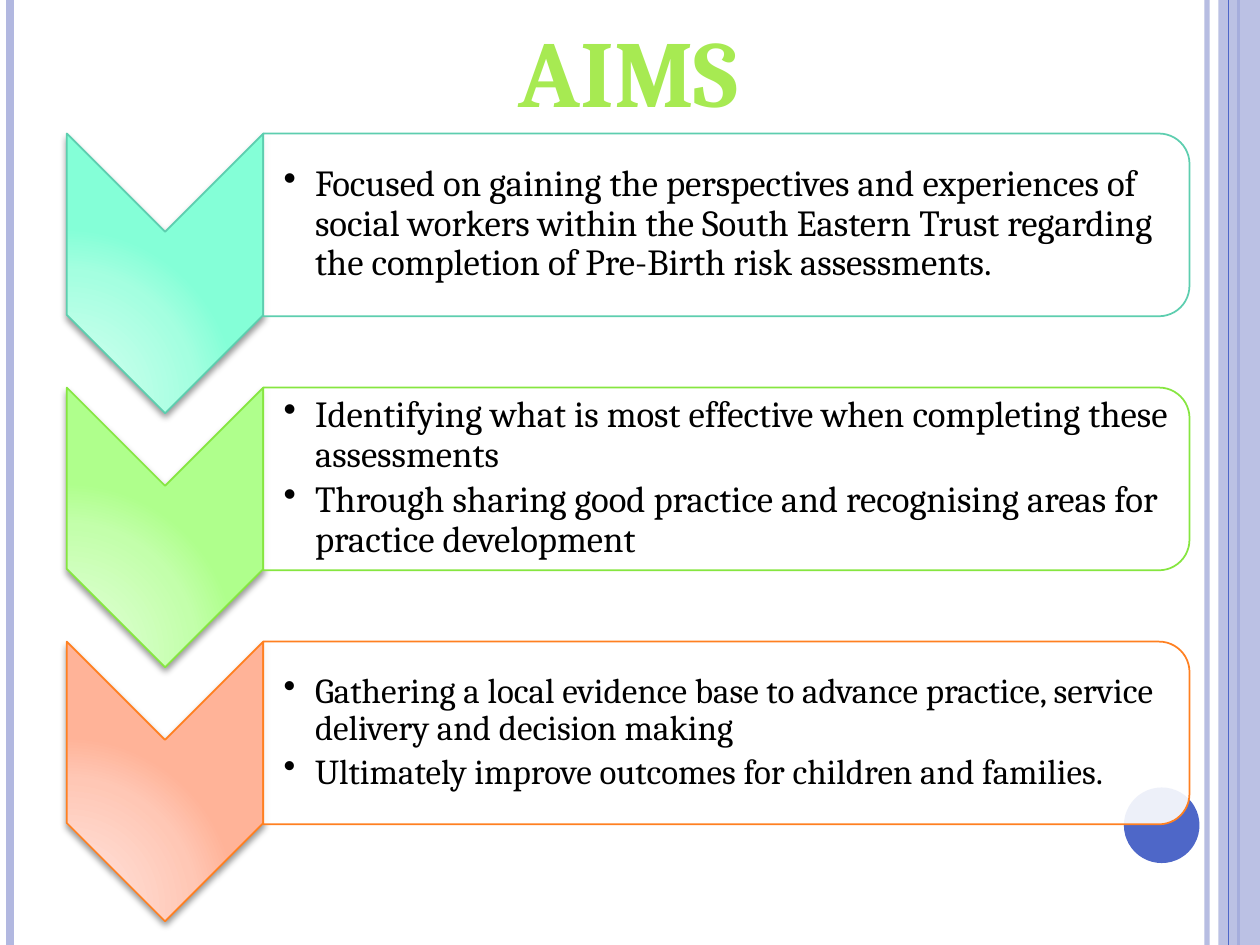
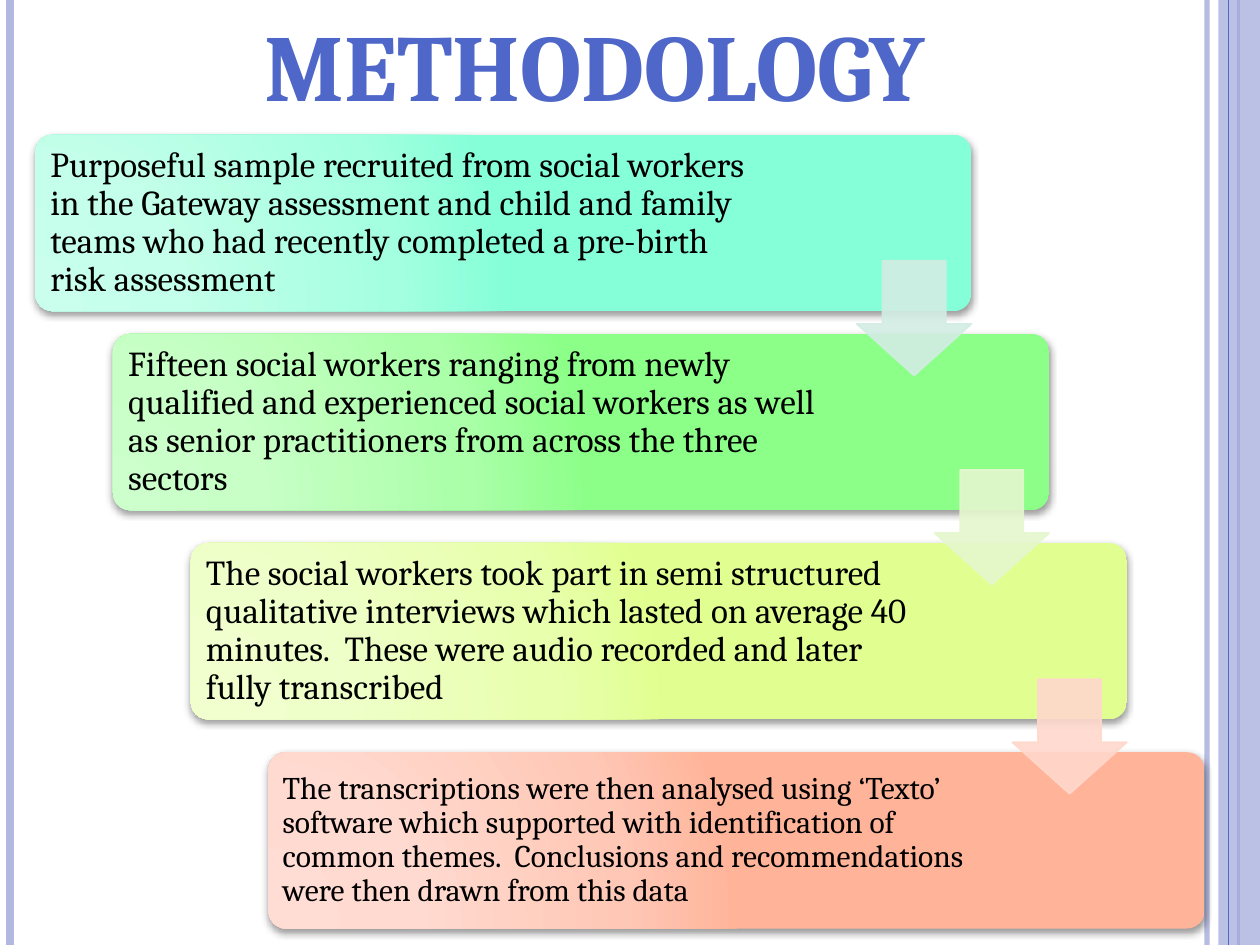
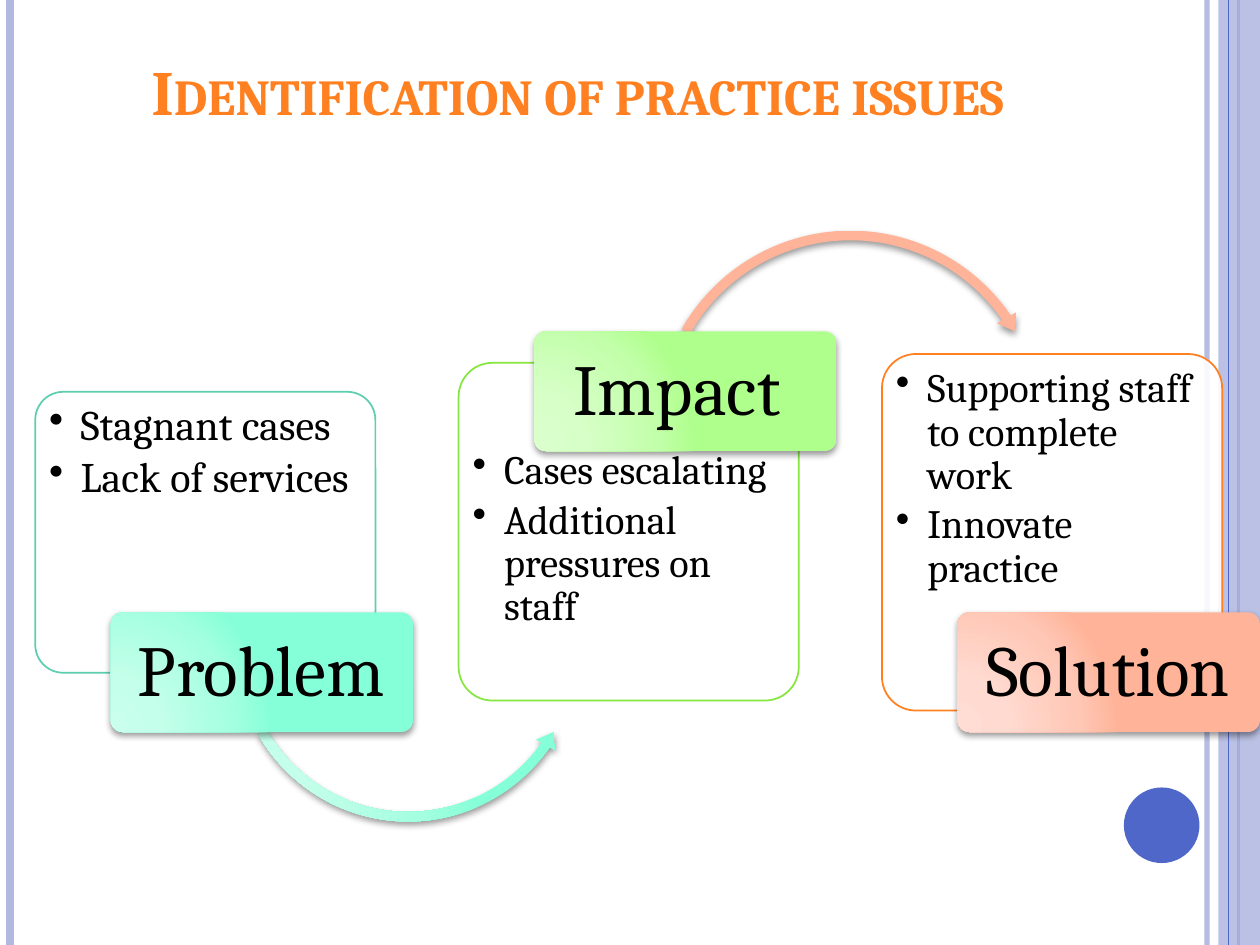
from dataclasses import dataclass

from lxml.etree import SubElement
from pptx import Presentation
from pptx.dml.color import RGBColor
from pptx.enum.shapes import MSO_CONNECTOR, MSO_SHAPE
from pptx.enum.text import MSO_ANCHOR, PP_ALIGN
from pptx.oxml import parse_xml
from pptx.oxml.ns import nsdecls, qn
from pptx.util import Inches, Pt


@dataclass(frozen=True)
class Theme:
    font: str = "Cambria"
    white: str = "FFFFFF"
    black: str = "000000"
    blue: str = "4E67C8"
    lavender: str = "B2B8E0"
    teal: str = "5DCEAF"
    leaf: str = "86E640"
    orange: str = "FF8021"
    lime: str = "A7EA52"
    pale_arrows: tuple = ("D2EDE3", "E5F7CE", "FFD8CC")
    aqua: tuple = ("C9FFEC", "C3FFEA", "A4FFE0", "84FFD7")
    spring: tuple = ("DAFFCD", "D7FFC8", "C3FFAB", "AFFF8C")
    green: tuple = ("CCFFCB", "C7FFC6", "AAFFA8", "8CFF89")
    yellow: tuple = ("F1FFCF", "EFFFCA", "E8FFAE", "E1FF90")
    peach: tuple = ("FFDDD4", "FFDAD0", "FFC7B5", "FFB398")
    gradient_stops: tuple = (0, 30, 75, 100)
    banner_size: int = 54
    label_size: int = 41
    heading_size: int = 36
    column_count: int = 100
    row_count: int = 75


def set_all(target, values):
    for name, value in values.items():
        setattr(target, name, value)


def turned(box):
    left, top, width, height = box
    shift = (width - height) / 2
    return left + shift, top - shift, height, width


class Deck:
    def __init__(self, theme):
        self.theme = theme
        self.presentation = Presentation()
        set_all(self.presentation, {"slide_width": Inches(10), "slide_height": Inches(7.5)})
        self.column = self.presentation.slide_width / theme.column_count
        self.row = self.presentation.slide_height / theme.row_count
        self.slide = None

    def place(self, box):
        units = (self.column, self.row, self.column, self.row)
        return [round(length * unit) for length, unit in zip(box, units)]

    def new_slide(self):
        theme = self.theme
        self.slide = self.presentation.slides.add_slide(self.presentation.slide_layouts[6])
        self.fade(self.stripe(95.8, theme.lavender, 3), 93)
        self.stripe(0.8, theme.lavender, 4.5)
        self.stripe(98.3, theme.blue, 1.5)
        self.fade(self.shape(MSO_SHAPE.RECTANGLE, (96.7, 0, 3.3, 75), theme.lavender), 87)
        self.stripe(97.5, theme.blue, 0.75)
        self.shape(MSO_SHAPE.OVAL, (89.2, 62.5, 6, 6), theme.blue)

    def stripe(self, column, color, width):
        start_x, start_y, end_x, end_y = self.place((column, 0, column, self.theme.row_count))
        connector = self.slide.shapes.add_connector(
            MSO_CONNECTOR.STRAIGHT, start_x, start_y, end_x, end_y)
        self.outline(connector, color, width)
        SubElement(connector.element.spPr, qn("a:effectLst"))
        return connector

    def shape(self, kind, box, color, adjustments=(), rotation=0):
        shape = self.slide.shapes.add_shape(kind, *self.place(box))
        shape.shadow.inherit = False
        shape.rotation = rotation
        shape.fill.solid()
        shape.fill.fore_color.rgb = RGBColor.from_string(color)
        shape.line.fill.background()
        for index, value in enumerate(adjustments):
            shape.adjustments[index] = value
        return shape

    def outline(self, shape, color, width=1):
        shape.line.color.rgb = RGBColor.from_string(color)
        shape.line.width = Pt(width)

    def fade(self, shape, opacity):
        for color in shape.element.spPr.iter(qn("a:srgbClr")):
            SubElement(color, qn("a:alpha"), val=str(opacity * 1000))

    def glossy(self, kind, box, colors, adjustments=(), rotation=0):
        shape = self.shape(kind, box, colors[-1], adjustments, rotation)
        properties = shape.element.spPr
        stops = "".join(
            f'<a:gs pos="{stop * 1000}"><a:srgbClr val="{color}"/></a:gs>'
            for stop, color in zip(self.theme.gradient_stops, colors))
        properties.replace(properties.find(qn("a:solidFill")), parse_xml(
            f'<a:gradFill {nsdecls("a")} rotWithShape="1"><a:gsLst>{stops}</a:gsLst>'
            '<a:path path="circle"><a:fillToRect l="5000" t="100000" r="120000" b="10000"/>'
            '</a:path></a:gradFill>'))
        properties.find(qn("a:effectLst")).append(parse_xml(
            f'<a:outerShdw {nsdecls("a")} blurRad="{Pt(4)}" dist="{Pt(2)}" dir="5400000" '
            f'rotWithShape="0"><a:srgbClr val="{self.theme.black}"><a:alpha val="40000"/>'
            '</a:srgbClr></a:outerShdw>'))
        return shape

    def panel(self, kind, box, color, adjustments=(), rotation=0):
        shape = self.shape(kind, box, self.theme.white, adjustments, rotation)
        self.fade(shape, 90)
        self.outline(shape, color)

    def text(self, box, paragraphs, size, color=None, bold=False, align=PP_ALIGN.LEFT,
             anchor=MSO_ANCHOR.MIDDLE, insets=(0.1, 0.05, 0.1, 0.05), wrap=True,
             spacing=None, after=0, bulleted=False, small_caps=False):
        frame = self.slide.shapes.add_textbox(*self.place(box)).text_frame
        left, top, right, bottom = map(Inches, insets)
        set_all(frame, {"word_wrap": wrap, "vertical_anchor": anchor, "margin_left": left,
                        "margin_top": top, "margin_right": right, "margin_bottom": bottom})
        for index, content in enumerate(paragraphs):
            paragraph = frame.add_paragraph() if index else frame.paragraphs[0]
            set_all(paragraph, {"alignment": align, "line_spacing": spacing,
                                "space_after": Pt(size * after)})
            run = paragraph.add_run()
            run.text = content
            set_all(run.font, {"name": self.theme.font, "size": Pt(size), "bold": bold})
            run.font.color.rgb = RGBColor.from_string(color or self.theme.black)
            if small_caps:
                run.font._element.set("cap", "small")
            if bulleted:
                properties = paragraph._p.get_or_add_pPr()
                properties.set("marL", str(Inches(0.25)))
                properties.set("indent", str(-Inches(0.25)))
                SubElement(properties, qn("a:buChar"), char="•")

    def bullets(self, box, paragraphs, size, **options):
        self.text(box, paragraphs, size, spacing=0.9, after=0.15, bulleted=True, **options)

    def banner(self, box, content, color):
        self.text(box, [content], self.theme.banner_size, color, bold=True,
                  align=PP_ALIGN.CENTER, anchor=MSO_ANCHOR.TOP, wrap=False)


def add_aims(deck):
    theme = deck.theme
    deck.new_slide()
    aims = [
        (theme.aqua, theme.teal, 21, [
            "Focused on gaining the perspectives and experiences of social workers within the "
            "South Eastern Trust regarding the completion of Pre-Birth risk assessments."]),
        (theme.spring, theme.leaf, 21, [
            "Identifying what is most effective when completing these assessments",
            "Through sharing good practice and recognising areas for practice development"]),
        (theme.peach, theme.orange, 20, [
            "Gathering a local evidence base to advance practice, service delivery and "
            "decision making",
            "Ultimately improve outcomes for children and families."]),
    ]
    for index, (colors, edge, size, paragraphs) in enumerate(aims):
        top = 10.6 + 20.16 * index
        chevron = deck.glossy(MSO_SHAPE.CHEVRON, turned((5.3, top, 15.6, 22.2)), colors,
                              rotation=90)
        deck.outline(chevron, edge)
        deck.panel(MSO_SHAPE.ROUND_2_SAME_RECTANGLE, turned((20.9, top, 73.5, 14.5)), edge,
                   rotation=90)
        deck.bullets((20.9, top + 0.7, 72.8, 13), paragraphs, size,
                     insets=(0.16, 0.01, 0.01, 0.01))
    deck.banner((39.4, 0.5, 21, 10.1), "AIMS", theme.lime)


def add_methodology(deck):
    theme = deck.theme
    deck.new_slide()
    steps = [
        (10.7, theme.aqua, 20,
         "Purposeful sample recruited from social workers in the Gateway assessment and child "
         "and family teams who had recently completed a pre-birth risk assessment"),
        (26.5, theme.green, 20,
         "Fifteen social workers ranging from newly qualified and experienced social workers "
         "as well as senior practitioners from across the three sectors"),
        (43.1, theme.yellow, 20,
         "The social workers took part in semi structured qualitative interviews which lasted "
         "on average 40 minutes.  These were audio recorded and later fully transcribed"),
        (59.7, theme.peach, 18,
         "The transcriptions were then analysed using ‘Texto’ software which supported with "
         "identification of common themes.  Conclusions and recommendations were then drawn "
         "from this data"),
    ]
    indent = 6.17
    for index, (top, colors, size, content) in enumerate(steps):
        left = 2.8 + indent * index
        deck.glossy(MSO_SHAPE.ROUNDED_RECTANGLE, (left, top, 74.3, 14), colors, (0.1,))
        deck.text((left + 0.4, top + 0.4, 58.2, 13.2), [content], size, spacing=0.9,
                  insets=(size * 0.004,) * 4)
    for index, color in enumerate(theme.pale_arrows):
        arrow = deck.shape(MSO_SHAPE.DOWN_ARROW,
                           (68 + indent * index, 20.7 + 16.6 * index, 9.1, 9.1),
                           color, (0.55, 0.45))
        deck.outline(arrow, color)
        deck.fade(arrow, 90)
    title_box = (16.1, 0.1, 62.2, 10.1)
    deck.outline(deck.shape(MSO_SHAPE.RECTANGLE, title_box, theme.white), theme.white, 2)
    deck.banner(title_box, "METHODOLOGY", theme.blue)


def add_practice_issues(deck):
    theme = deck.theme
    deck.new_slide()
    deck.text((5, 3, 81.7, 7.7), ["Identification of practice issues"], theme.heading_size,
              theme.orange, bold=True, align=PP_ALIGN.CENTER, anchor=MSO_ANCHOR.BOTTOM,
              small_caps=True)
    left_arrow = (MSO_SHAPE.LEFT_CIRCULAR_ARROW, (18.2, 37.3, 28.4, 28.4), theme.aqua,
                  (0.027, 3.24, 21.019, 90.269, 0.031))
    right_arrow = (MSO_SHAPE.CIRCULAR_ARROW, (51.6, 17.8, 31.8, 31.8), theme.peach,
                   (0.024, 2.869, 195.368, 125.748, 0.028))
    issues = [
        ("Problem", theme.aqua, theme.teal, (31.1, 22.3), (31.6, 16.5), 48.6, 24, left_arrow,
         ["Stagnant cases", "Lack of services"]),
        ("Impact ", theme.spring, theme.leaf, (28.8, 26.8), (35.2, 19.8), 26.3, 23, right_arrow,
         ["Cases escalating", "Additional pressures on staff"]),
        ("Solution", theme.peach, theme.orange, (28.1, 28.3), (28.7, 21), 48.6, 23, None,
         ["Supporting staff to complete work", "Innovate practice"]),
    ]
    for index, issue in enumerate(issues):
        name, colors, edge, card, body, label_top, size, arrow, paragraphs = issue
        left = 2.8 + 33.6 * index
        deck.panel(MSO_SHAPE.ROUNDED_RECTANGLE, (left, card[0], 27, card[1]), edge, (0.1,))
        deck.bullets((left + 0.6, body[0], 25.8, body[1]), paragraphs, size,
                     anchor=MSO_ANCHOR.TOP, insets=(0.05,) * 4)
        if arrow:
            deck.glossy(*arrow)
        deck.glossy(MSO_SHAPE.ROUNDED_RECTANGLE, (left + 6, label_top, 24, 9.5), colors, (0.1,))
        deck.text((left + 6.2, label_top + 0.3, 23.5, 9), [name], theme.label_size,
                  align=PP_ALIGN.CENTER, spacing=0.9, insets=(0.09, 0.06, 0.09, 0.06))


def main():
    deck = Deck(Theme())
    add_aims(deck)
    add_methodology(deck)
    add_practice_issues(deck)
    deck.presentation.save("out.pptx")


if __name__ == "__main__":
    main()
